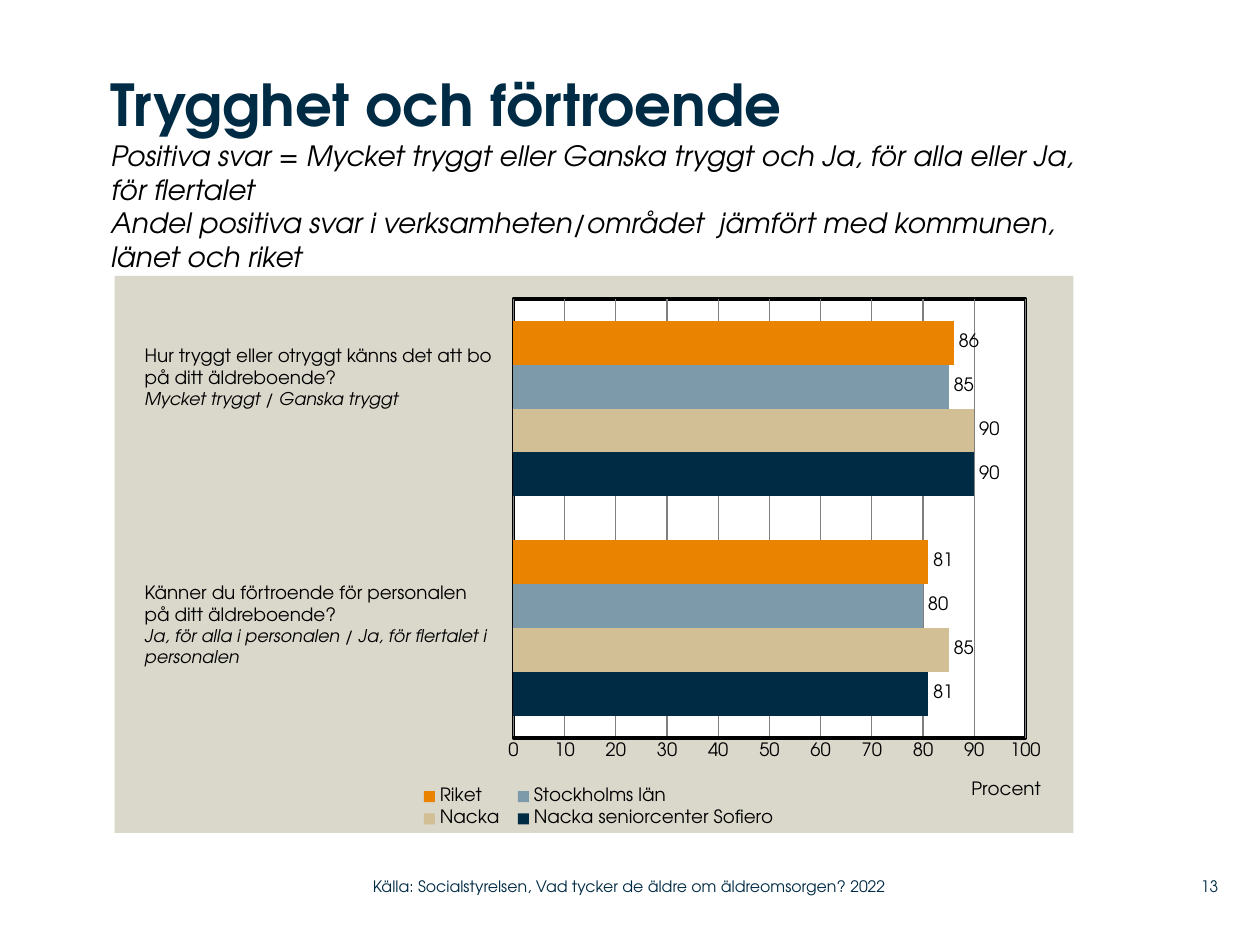
from lxml import etree
from pptx import Presentation
from pptx.chart.data import CategoryChartData
from pptx.dml.color import RGBColor
from pptx.enum.chart import XL_CHART_TYPE as ChartType, XL_LABEL_POSITION as LabelPos
from pptx.enum.chart import XL_LEGEND_POSITION as LegendPos, XL_TICK_MARK as Tick
from pptx.enum.text import MSO_ANCHOR as Anchor, PP_ALIGN as Align
from pptx.oxml import parse_xml
from pptx.oxml.ns import nsdecls, qn
from pptx.util import Inches, Pt

FONT = "TeX Gyre Adventor"
NAVY, BLACK, WHITE, SAND, GREY = "002B45", "000000", "FFFFFF", "DAD7CB", "808080"
SERIES = [
    ("Nacka seniorcenter Sofiero", (81, 90), NAVY),
    ("Nacka", (85, 90), "D3BF96"),
    ("Stockholms län", (80, 85), "7D9AAA"),
    ("Riket", (81, 86), "E98300"),
]


def rgb(value):
    return RGBColor.from_string(value)


def style(font, size, color, bold=False, italic=False):
    font.name, font.size = FONT, Pt(size)
    font.bold, font.italic = bold, italic
    font.color.rgb = rgb(color)


def add_text(slide, box, paragraphs, inset=True, anchor=Anchor.TOP, align=Align.LEFT):
    frame = slide.shapes.add_textbox(*map(Inches, box)).text_frame
    frame.word_wrap = True
    frame.vertical_anchor = anchor
    if not inset:
        frame.margin_left = frame.margin_right = 0
        frame.margin_top = frame.margin_bottom = 0
    frame.text = "\n".join(text for text, *_ in paragraphs)
    for paragraph, (_, size, color, italic) in zip(frame.paragraphs, paragraphs):
        paragraph.alignment = align
        for run in paragraph.runs:
            style(run.font, size, color, italic=italic)
    return frame


def add_heading(slide):
    lines = "\v".join([
        "Trygghet och förtroende",
        "Positiva svar = Mycket tryggt eller Ganska tryggt och Ja, för alla eller Ja, för flertalet",
        "Andel positiva svar i verksamheten/området  jämfört med kommunen, länet och riket",
    ])
    frame = add_text(slide, (0.88, 0.55, 7.75, 1.64), [(lines, 16, BLACK, True)], inset=False)
    style(frame.paragraphs[0].runs[0].font, 33, NAVY, bold=True)


def add_question(slide, box, question, answers):
    lines = [(line, 10.5, BLACK, False) for line in question]
    add_text(slide, box, lines + [(answers, 10, BLACK, True)])


def add_footer(slide, left, width, text, align=Align.LEFT):
    add_text(slide, (left, 6.89, width, 0.29), [(text, 9, NAVY, False)],
             inset=False, anchor=Anchor.MIDDLE, align=align)


def place(element, before, x, y, w=None, h=None, inner=False):
    for old in element.findall(qn("c:layout")):
        element.remove(old)
    layout = parse_xml(f"<c:layout {nsdecls('c')}><c:manualLayout/></c:layout>")
    values = [("layoutTarget", "inner")] if inner else []
    values += [("xMode", "edge"), ("yMode", "edge"), ("x", x), ("y", y)]
    if w:
        values += [("w", w), ("h", h)]
    for name, value in values:
        etree.SubElement(layout[0], qn(f"c:{name}")).set("val", str(value))
    following = [element.find(qn(f"c:{name}")) for name in before]
    target = next((item for item in following if item is not None), None)
    if target is None:
        element.append(layout)
    else:
        target.addprevious(layout)


def paint(parent, fill, line=None):
    outline = f'<a:solidFill><a:srgbClr val="{line}"/></a:solidFill>' if line else "<a:noFill/>"
    return parse_xml(
        f'<c:spPr {nsdecls("c", "a")}><a:solidFill><a:srgbClr val="{fill}"/></a:solidFill>'
        f'<a:ln w="{Pt(2)}">{outline}</a:ln></c:spPr>')


def add_answer_chart(slide):
    data = CategoryChartData()
    data.categories = ["1", "2"]
    for name, values, _ in SERIES:
        data.add_series(name, values)
    box = map(Inches, (0.91, 2.19, 7.61, 4.42))
    chart = slide.shapes.add_chart(ChartType.BAR_CLUSTERED, *box, data).chart
    style(chart.font, 10.5, BLACK)
    chart.has_title = False

    plot = chart.plots[0]
    plot.gap_width, plot.overlap = 100, 0
    plot.vary_by_categories = False
    for series, (_, _, color) in zip(plot.series, SERIES):
        series.format.fill.solid()
        series.format.fill.fore_color.rgb = rgb(color)
        series.format.line.fill.background()
        labels = series.data_labels
        labels.show_value = True
        labels.position = LabelPos.OUTSIDE_END
        style(labels.font, 10.5, BLACK)

    chart.category_axis.visible = False
    percent = chart.value_axis
    percent.minimum_scale, percent.maximum_scale, percent.major_unit = 0, 100, 10
    percent.major_tick_mark = percent.minor_tick_mark = Tick.NONE
    percent.has_major_gridlines = True
    percent.major_gridlines.format.line.color.rgb = rgb(GREY)
    percent.format.line.color.rgb = rgb(BLACK)
    percent.format.line.width = Pt(2)
    style(percent.tick_labels.font, 10.5, BLACK)
    title = percent.axis_title
    title.text_frame.text = "Procent"
    style(title.text_frame.paragraphs[0].runs[0].font, 10.5, BLACK)
    place(title._element, ["overlay"], 0.89, 0.9)

    chart.has_legend = True
    legend = chart.legend
    legend.position = LegendPos.BOTTOM
    legend.include_in_layout = False
    style(legend.font, 10.5, BLACK)
    place(legend._element, ["overlay"], 0.31, 0.91, 0.39, 0.09)

    space = chart._chartSpace
    area = space.chart.plotArea
    place(area, ["barChart"], 0.416, 0.041, 0.534, 0.789, inner=True)
    area.append(paint(area, WHITE, BLACK))
    space.chart.addnext(paint(space, SAND))


def main():
    deck = Presentation()
    deck.slide_width, deck.slide_height = Inches(10), Inches(7.5)
    slide = deck.slides.add_slide(deck.slide_layouts[6])
    add_heading(slide)
    add_answer_chart(slide)
    add_question(slide, (1.05, 2.68, 2.98, 0.81),
                 ["Hur tryggt eller otryggt känns det att bo på ditt äldreboende?"],
                 "Mycket tryggt / Ganska tryggt")
    add_question(slide, (1.05, 4.56, 3, 0.98),
                 ["Känner du förtroende för personalen", "på ditt äldreboende?"],
                 "Ja, för alla i personalen / Ja, för flertalet i personalen")
    add_footer(slide, 2.96, 4.43,
               "Källa: Socialstyrelsen, Vad tycker de äldre om äldreomsorgen? 2022")
    add_footer(slide, 9.2, 0.47, "13", Align.RIGHT)
    deck.save("out.pptx")


if __name__ == "__main__":
    main()
